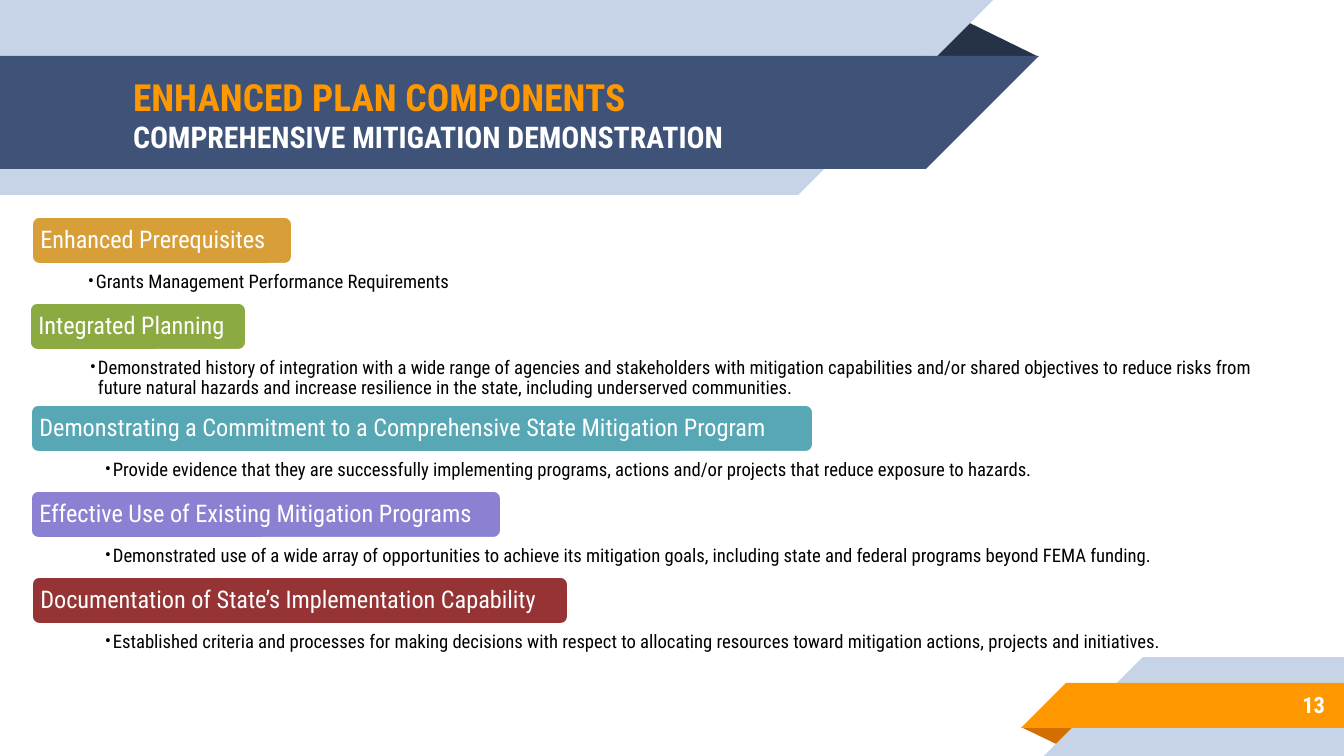
import pptx
import pptx.dml.color
import pptx.enum.shapes
import pptx.enum.text
import pptx.oxml.ns
import pptx.util
from dataclasses import dataclass
from lxml import etree

SHAPE = pptx.enum.shapes.MSO_SHAPE
ALIGN = pptx.enum.text.PP_ALIGN
ANCHOR = pptx.enum.text.MSO_ANCHOR
SCALE = 9144000 / 1344


@dataclass(frozen=True)
class Theme:
    font: str = "Roboto Condensed"
    white: str = "FFFFFF"
    black: str = "000000"
    pale: str = "C7D3E6"
    navy: str = "3F5378"
    midnight: str = "263248"
    orange: str = "FF9800"
    rust: str = "D26F00"
    gold: str = "D89F39"
    green: str = "8BAB42"
    teal: str = "57A7B5"
    violet: str = "8B81D2"
    red: str = "963334"
    title_size: int = 20
    subtitle_size: int = 16
    heading_size: int = 13
    number_size: int = 12
    note_size: int = 10


def px(length):
    return pptx.util.Emu(round(length * SCALE))


def rgb(color):
    return pptx.dml.color.RGBColor.from_string(color)


def add_span(para, text, *, font, size, color, bold=False):
    span = para.add_run()
    span.text = text
    span.font.name = font
    span.font.size = pptx.util.Pt(size)
    span.font.color.rgb = rgb(color)
    span.font.bold = bold


def add_bullet(para, color, font, indent):
    properties = para._p.get_or_add_pPr()
    properties.set("marL", str(px(indent)))
    properties.set("indent", str(-px(indent)))
    tag = pptx.oxml.ns.qn
    bullet_color = etree.SubElement(properties, tag("a:buClr"))
    etree.SubElement(bullet_color, tag("a:srgbClr"), val=color)
    etree.SubElement(properties, tag("a:buFont"), typeface=font)
    etree.SubElement(properties, tag("a:buChar"), char="•")


class SlideBuilder:
    def __init__(self, page, theme):
        self.page = page
        self.theme = theme

    def frame(self, box, insets, anchor):
        frame = box.text_frame
        frame.word_wrap = True
        frame.auto_size = pptx.enum.text.MSO_AUTO_SIZE.NONE
        frame.vertical_anchor = anchor
        frame.margin_left, frame.margin_top, frame.margin_right, frame.margin_bottom = map(px, insets)
        return frame.paragraphs[0]

    def shape(self, kind, bounds, color, rotation=0):
        shape = self.page.shapes.add_shape(kind, *map(px, bounds))
        shape.shadow.inherit = False
        shape.fill.solid()
        shape.fill.fore_color.rgb = rgb(color)
        shape.line.fill.background()
        shape.rotation = rotation
        return shape

    def fold(self, bounds, color, rotation=0):
        shape = self.shape(SHAPE.ISOSCELES_TRIANGLE, bounds, color, rotation)
        shape.adjustments[0] = 0.32

    def left_ribbon(self, top, width, height, color):
        self.shape(SHAPE.RECTANGLE, (0, top, width, height), color)
        self.shape(SHAPE.RIGHT_TRIANGLE, (width, top, height, height), color, 90)

    def right_ribbon(self, left, top, height, color):
        self.shape(SHAPE.RECTANGLE, (left, top, 1344 - left, height), color)
        self.shape(SHAPE.RIGHT_TRIANGLE, (left - height, top, height, height), color, 270)

    def title(self, bounds, heading, subheading):
        theme = self.theme
        box = self.page.shapes.title
        self.page.shapes.element.append(box.element)
        box.left, box.top, box.width, box.height = map(px, bounds)
        para = self.frame(box, (13, 13, 13, 13), ANCHOR.MIDDLE)
        para.alignment = ALIGN.LEFT
        add_span(para, heading, font=theme.font, size=theme.title_size, color=theme.orange, bold=True)
        para.add_line_break()
        add_span(para, subheading, font=theme.font, size=theme.subtitle_size, color=theme.white, bold=True)

    def number(self, bounds, text):
        theme = self.theme
        box = self.page.shapes.add_textbox(*map(px, bounds))
        para = self.frame(box, (13, 13, 13, 13), ANCHOR.MIDDLE)
        para.alignment = ALIGN.RIGHT
        add_span(para, text, font=theme.font, size=theme.number_size, color=theme.white, bold=True)

    def heading(self, bounds, text, color):
        theme = self.theme
        bar = self.shape(SHAPE.ROUNDED_RECTANGLE, bounds, color)
        bar.line.color.rgb = rgb(theme.white)
        bar.line.width = pptx.util.Pt(2)
        para = self.frame(bar, (7, 7, 7, 7), ANCHOR.MIDDLE)
        para.alignment = ALIGN.LEFT
        para.line_spacing = 0.9
        add_span(para, text, font=theme.font, size=theme.heading_size, color=theme.white)

    def note(self, bounds, text):
        theme = self.theme
        box = self.page.shapes.add_textbox(*map(px, bounds))
        para = self.frame(box, (40, 3, 13, 3), ANCHOR.TOP)
        add_bullet(para, theme.black, theme.font, 8)
        para.font.size = pptx.util.Pt(theme.note_size)
        para.level = 1
        para.line_spacing = 0.9
        add_span(para, text, font=theme.font, size=theme.note_size, color=theme.black)


def main():
    deck = pptx.Presentation()
    deck.slide_width, deck.slide_height = px(1344), px(756)
    theme = Theme()
    slide = SlideBuilder(deck.slides.add_slide(deck.slide_layouts[5]), theme)

    slide.fold((925, 19, 114, 38), theme.midnight)
    slide.left_ribbon(0, 798, 195, theme.pale)
    slide.left_ribbon(56, 926, 113, theme.navy)
    slide.fold((1021, 727, 58, 19), theme.rust, 180)
    slide.right_ribbon(1143, 657, 99, theme.pale)
    slide.right_ribbon(1066, 683, 45, theme.orange)
    slide.title((120, 58, 773, 113), "ENHANCED PLAN COMPONENTS", "COMPREHENSIVE MITIGATION DEMONSTRATION")
    slide.number((1119, 681, 219, 47), "13")

    components = [
        ("Enhanced Prerequisites", theme.gold, 31, 262, 48, 1,
         "Grants Management Performance Requirements"),
        ("Integrated Planning", theme.green, 29, 218, 50, 2,
         "Demonstrated history of integration with a wide range of agencies and stakeholders with "
         "mitigation capabilities and/or shared objectives to reduce risks from future natural hazards "
         "and increase resilience in the state, including underserved communities."),
        ("Demonstrating a Commitment to a Comprehensive State Mitigation Program", theme.teal, 30, 784, 65, 1,
         "Provide evidence that they are successfully implementing programs, actions and/or projects "
         "that reduce exposure to hazards."),
        ("Effective Use of Existing Mitigation Programs", theme.violet, 30, 472, 65, 1,
         "Demonstrated use of a wide array of opportunities to achieve its mitigation goals, including "
         "state and federal programs beyond FEMA funding."),
        ("Documentation of State’s Implementation Capability", theme.red, 31, 538, 65, 1,
         "Established criteria and processes for making decisions with respect to allocating resources "
         "toward mitigation actions, projects and initiatives."),
    ]
    top = 216
    for heading, color, bar_left, bar_width, note_left, lines, note in components:
        slide.heading((bar_left, top, bar_width, 49), heading, color)
        slide.note((note_left, top + 53, 1250, 18 + 16 * lines), note)
        top += 70 + 16 * lines

    deck.save("out.pptx")


if __name__ == "__main__":
    main()
